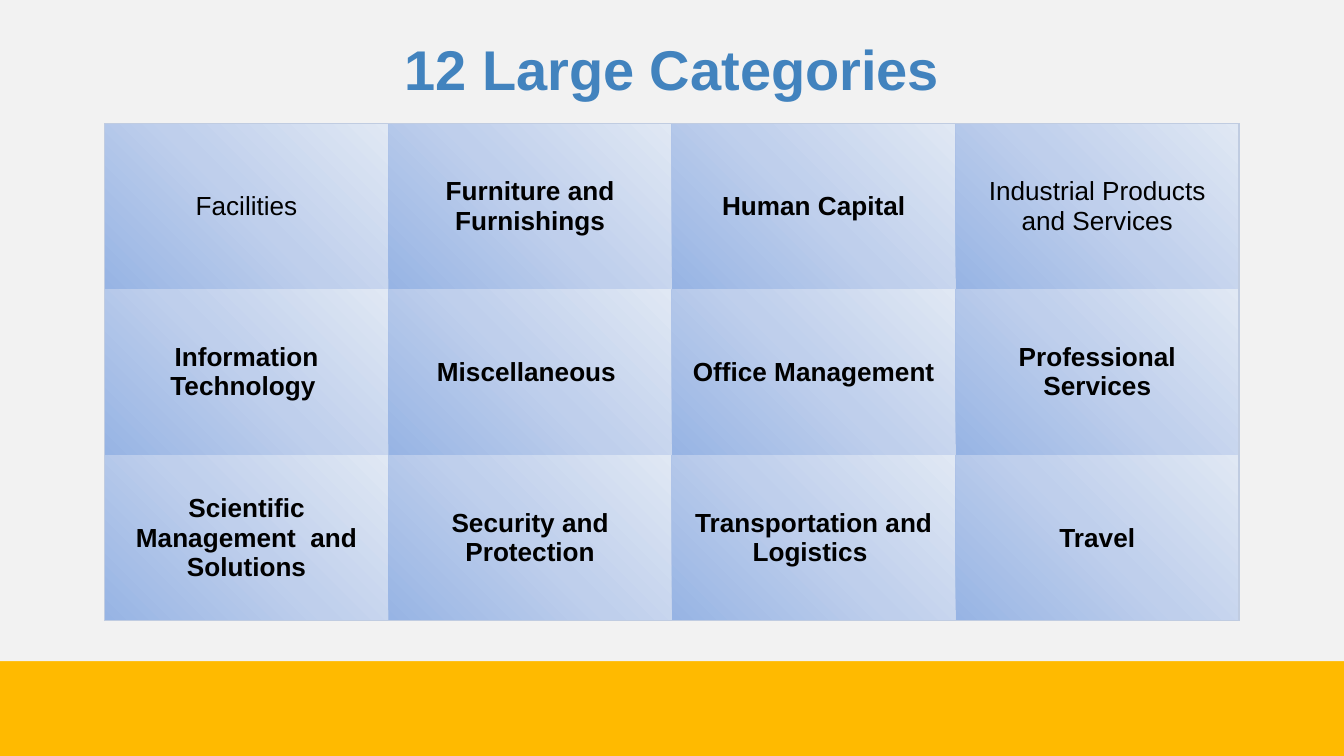
"""Build a slide showing twelve large categories in a shaded table."""
from lxml import etree
from pptx import Presentation
from pptx.dml.color import RGBColor
from pptx.enum import shapes, text
from pptx.oxml import ns
from pptx.util import Inches, Pt

FONT = "Arial"
YELLOW = RGBColor(0xFF, 0xBA, 0x00)
PALE_GRAY = RGBColor(0xF2, 0xF2, 0xF2)
TITLE_BLUE = RGBColor(0x42, 0x83, 0xBE)
BLACK = RGBColor(0x00, 0x00, 0x00)
BORDER = RGBColor(0xC0, 0xCC, 0xE1)
GRADIENT = {
    0: RGBColor(0x97, 0xB4, 0xE4),
    50: RGBColor(0xBF, 0xCF, 0xEC),
    100: RGBColor(0xE0, 0xE8, 0xF4),
}
GRADIENT_ANGLE = 315
NO_STYLE = "{2D5ABB26-0587-4C30-8999-92F81FD0307C}"
CATEGORIES = [
    ["Facilities", "Furniture and Furnishings", "Human Capital",
     "Industrial Products and Services"],
    ["Information Technology ", "Miscellaneous ", "Office Management",
     "Professional Services"],
    ["Scientific Management  and Solutions", "Security and Protection",
     "Transportation and Logistics ", "Travel"],
]
REGULAR = {"Facilities", "Industrial Products and Services"}


def add_band(slide, top, height, color):
    """Add a full-width background band."""
    band = slide.shapes.add_shape(
        shapes.MSO_SHAPE.RECTANGLE, 0, top, Inches(10), height)
    band.shadow.inherit = False
    band.fill.solid()
    band.fill.fore_color.rgb = color
    band.line.fill.background()


def write(frame, content, size, color, bold):
    """Write one centred, formatted paragraph."""
    frame.text = content
    frame.word_wrap = True
    paragraph = frame.paragraphs[0]
    paragraph.alignment = text.PP_ALIGN.CENTER
    font = paragraph.runs[0].font
    font.name, font.size, font.bold = FONT, Pt(size), bold
    font.color.rgb = color


def add_title(slide, content):
    """Add the slide title."""
    frame = slide.shapes.add_textbox(
        Inches(0.5), Inches(0.21), Inches(9), Inches(0.59)).text_frame
    write(frame, content, 30, TITLE_BLUE, True)
    frame.vertical_anchor = text.MSO_ANCHOR.BOTTOM
    frame.margin_bottom = Inches(0.04)


def add_child(parent, tag, **attributes):
    """Append a DrawingML element with the given attributes."""
    child = etree.SubElement(parent, ns.qn(f"a:{tag}"))
    for name, value in attributes.items():
        child.set(name, str(value))
    return child


def style_cell(cell, edges):
    """Draw the given cell edges and the gradient fill."""
    properties = cell._tc.get_or_add_tcPr()
    for edge in edges:
        line = add_child(properties, f"ln{edge}", w=Pt(0.75))
        add_child(add_child(line, "solidFill"), "srgbClr", val=BORDER)
    gradient = add_child(properties, "gradFill", rotWithShape=1)
    stops = add_child(gradient, "gsLst")
    for position, color in GRADIENT.items():
        stop = add_child(stops, "gs", pos=position * 1000)
        add_child(stop, "srgbClr", val=color)
    add_child(gradient, "lin", ang=GRADIENT_ANGLE * 60000, scaled=0)


def add_category_table(slide, rows):
    """Add the category grid with a border around the outside only."""
    last_row, last_column = len(rows) - 1, len(rows[0]) - 1
    frame = slide.shapes.add_table(
        len(rows), len(rows[0]), Inches(0.78), Inches(0.92),
        Inches(8.44), Inches(3.7))
    table = frame.table
    table.first_row = table.horz_banding = False
    table._tbl.tblPr.find(ns.qn("a:tableStyleId")).text = NO_STYLE
    for r, row in enumerate(rows):
        for c, category in enumerate(row):
            cell = table.cell(r, c)
            write(cell.text_frame, category, 14, BLACK, category not in REGULAR)
            cell.vertical_anchor = text.MSO_ANCHOR.MIDDLE
            cell.margin_left = cell.margin_right = Inches(0.1)
            cell.margin_top = cell.margin_bottom = Inches(0.04)
            outside = {"L": c == 0, "R": c == last_column,
                       "T": r == 0, "B": r == last_row}
            style_cell(cell, [edge for edge, drawn in outside.items() if drawn])


def main():
    """Build and save the presentation."""
    presentation = Presentation()
    presentation.slide_width = Inches(10)
    presentation.slide_height = Inches(10) * 9 // 16
    slide = presentation.slides.add_slide(presentation.slide_layouts[6])
    band_top = Inches(4.92)
    add_band(slide, band_top, presentation.slide_height - band_top, YELLOW)
    add_band(slide, 0, band_top, PALE_GRAY)
    add_category_table(slide, CATEGORIES)
    add_title(slide, "12 Large Categories")
    presentation.save("out.pptx")


if __name__ == "__main__":
    main()
